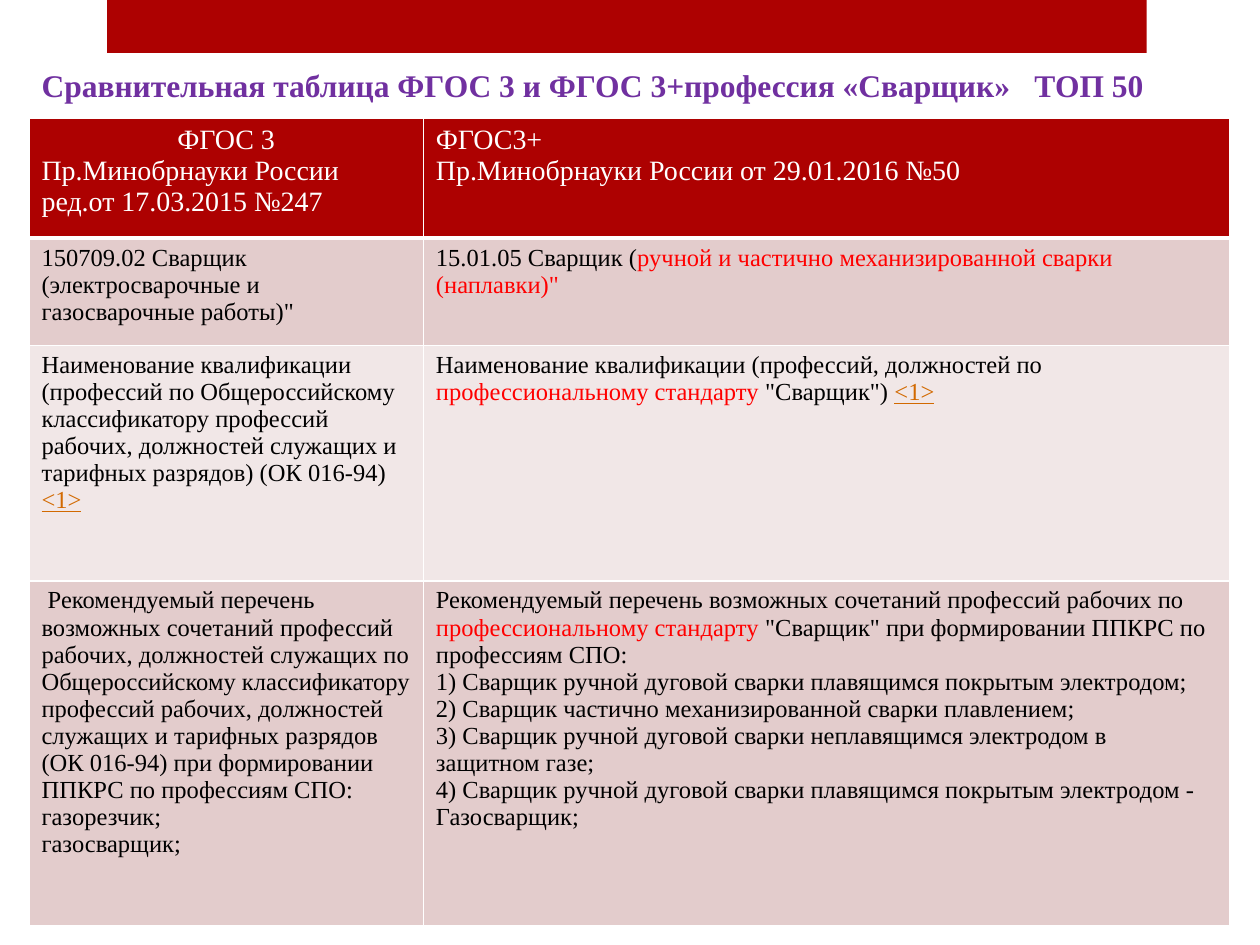
"""Build a slide comparing two editions of the welder training standard."""
from dataclasses import dataclass

from lxml import etree
from pptx import Presentation
from pptx.dml.color import RGBColor
from pptx.enum.shapes import MSO_SHAPE
from pptx.enum.text import MSO_ANCHOR, PP_ALIGN
from pptx.oxml.ns import qn
from pptx.util import Inches, Pt

RECT = MSO_SHAPE.RECTANGLE
MIDDLE = MSO_ANCHOR.MIDDLE
LEFT, CENTER = PP_ALIGN.LEFT, PP_ALIGN.CENTER
FONT = "Times New Roman"
COLORS = {
    "header": "AD0101", "odd": "E3CCCC", "even": "F1E7E7", "white": "FFFFFF",
    "black": "000000", "red": "FF0000", "link": "D26900", "title": "7030A0",
}
COLS = [3.13, 6.4]
ROWS = [0.95, 0.85, 1.87, 2.74]
TITLE_TAB = 7.88


@dataclass
class Span:
    text: str
    color: str = "black"
    size: int = 14
    bold: bool = False
    underline: bool = False


@dataclass
class Para:
    spans: list[Span]
    align: PP_ALIGN = LEFT


def plain(*texts: str) -> list[Para]:
    return [Para([Span(text)]) for text in texts]


def header(text: str, align: PP_ALIGN = LEFT) -> Para:
    return Para([Span(text, "white", 16)], align)


NOTE = Span("<1>", "link", underline=True)
STANDARD = Span("профессиональному стандарту ", "red")
TABLE = [
    [
        [header("ФГОС 3", CENTER), header("Пр.Минобрнауки России ред.от 17.03.2015 №247")],
        [header("ФГОС3+"), header("Пр.Минобрнауки России от 29.01.2016 №50")],
    ],
    [
        plain('150709.02 Сварщик (электросварочные и газосварочные работы)"'),
        [Para([
            Span("15.01.05 Сварщик ("),
            Span('ручной и частично механизированной сварки (наплавки)"', "red"),
        ])],
    ],
    [
        [Para([
            Span("Наименование квалификации (профессий по Общероссийскому "
                 "классификатору профессий рабочих, должностей служащих и "
                 "тарифных разрядов) (ОК 016-94) "),
            NOTE,
        ])],
        [Para([
            Span("Наименование квалификации (профессий, должностей по "),
            STANDARD, Span('"Сварщик") '), NOTE,
        ])],
    ],
    [
        plain(
            " Рекомендуемый перечень возможных сочетаний профессий рабочих, "
            "должностей служащих по Общероссийскому классификатору профессий "
            "рабочих, должностей служащих и тарифных разрядов (ОК 016-94) "
            "при формировании ППКРС по профессиям СПО:",
            "газорезчик;",
            "газосварщик;",
        ),
        [
            Para([
                Span("Рекомендуемый перечень возможных сочетаний профессий рабочих по "),
                STANDARD,
                Span('"Сварщик" при формировании ППКРС по профессиям СПО:'),
            ]),
            *plain(
                "1) Сварщик ручной дуговой сварки плавящимся покрытым электродом;",
                "2) Сварщик частично механизированной сварки плавлением;",
                "3) Сварщик ручной дуговой сварки неплавящимся электродом в защитном газе;",
                "4) Сварщик ручной дуговой сварки плавящимся покрытым электродом - Газосварщик;",
            ),
        ],
    ],
]


def rgb(name: str) -> RGBColor:
    return RGBColor.from_string(COLORS[name])


def write(tf, paras: list[Para]) -> None:
    for i, para in enumerate(paras):
        p = tf.add_paragraph() if i else tf.paragraphs[0]
        p.alignment = para.align
        for span in para.spans:
            r = p.add_run()
            r.text = span.text
            r.font.name = FONT
            r.font.size = Pt(span.size)
            r.font.bold = span.bold
            r.font.underline = span.underline
            r.font.color.rgb = rgb(span.color)


def add_band(s) -> None:
    sp = s.shapes.add_shape(RECT, Inches(0.85), 0, Inches(8.25), Inches(0.42))
    sp.shadow.inherit = False
    sp.fill.solid()
    sp.fill.fore_color.rgb = rgb("header")
    sp.line.fill.background()


def set_title(s) -> None:
    sp = s.shapes.title
    sp.left, sp.top = Inches(0.23), Inches(0.47)
    sp.width, sp.height = Inches(9.45), Inches(0.4)
    tf = sp.text_frame
    tf.word_wrap = True
    tf.vertical_anchor = MIDDLE
    text = "Сравнительная таблица ФГОС 3 и ФГОС 3+профессия «Сварщик»\tТОП 50"
    write(tf, [Para([Span(text, "title", 18, bold=True)])])
    pPr = tf.paragraphs[0]._p.get_or_add_pPr()
    tabs = etree.SubElement(pPr, qn("a:tabLst"))
    etree.SubElement(tabs, qn("a:tab"), pos=str(Inches(TITLE_TAB)), algn="l")


def set_borders(cell, top: float, bottom: float) -> None:
    tcPr = cell._tc.get_or_add_tcPr()
    for side, width in (("L", 1), ("R", 1), ("T", top), ("B", bottom)):
        ln = etree.SubElement(tcPr, qn(f"a:ln{side}"), w=str(Pt(width)))
        fill = etree.SubElement(ln, qn("a:solidFill"))
        etree.SubElement(fill, qn("a:srgbClr"), val=COLORS["white"])


def add_comparison(s) -> None:
    table = s.shapes.add_table(
        len(ROWS), len(COLS), Inches(0.23), Inches(0.94),
        Inches(sum(COLS)), Inches(sum(ROWS)),
    ).table
    for col, width in zip(table.columns, COLS):
        col.width = Inches(width)
    for i, (row, height) in enumerate(zip(table.rows, ROWS)):
        row.height = Inches(height)
        fill = "header" if i == 0 else "odd" if i % 2 else "even"
        for cell, paras in zip(row.cells, TABLE[i]):
            set_borders(cell, 3 if i == 1 else 1, 3 if i == 0 else 1)
            cell.fill.solid()
            cell.fill.fore_color.rgb = rgb(fill)
            write(cell.text_frame, paras)


def main() -> None:
    prs = Presentation()
    prs.slide_width, prs.slide_height = Inches(10), Inches(7.5)
    s = prs.slides.add_slide(prs.slide_layouts[5])
    add_band(s)
    add_comparison(s)
    set_title(s)
    prs.save("out.pptx")


if __name__ == "__main__":
    main()
